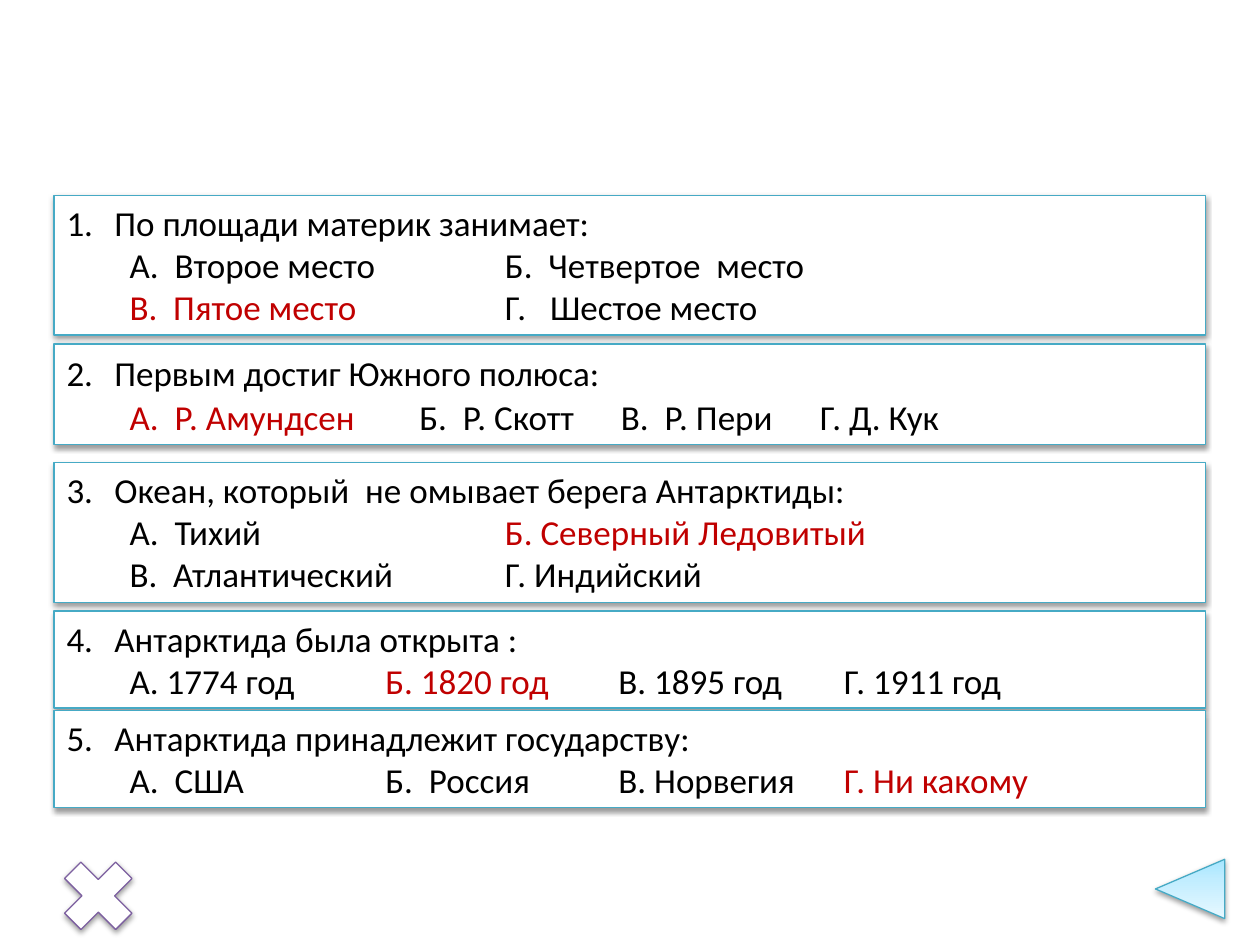
import copy

import pptx
import pptx.dml.color
import pptx.enum.shapes
import pptx.enum.text
import pptx.oxml
import pptx.oxml.ns
import pptx.util
from pptx.util import Inches

SHAPE = pptx.enum.shapes.MSO_SHAPE
BLACK, WHITE, RED = "000000", "FFFFFF", "C00000"
TEAL, PURPLE = "46AAC5", "7D60A0"
TWO_COLUMNS = (0.5, 3.48)
NAME_COLUMNS = (0.5, 2.8, 4.4, 5.98)
FOUR_COLUMNS = (0.5, 2.53, 4.38, 6.17)

QUESTIONS = [
    dict(top=0, height=1.11, question="По площади материк занимает:", columns=TWO_COLUMNS, correct="В.",
         rows=[["А.  Второе место", "Б.  Четвертое  место"],
               ["В.  Пятое место", "Г.   Шестое место"]]),
    dict(top=1.18, height=0.8, question="Первым достиг Южного полюса:", columns=NAME_COLUMNS, correct="А.",
         rows=[["А.  Р. Амундсен", "Б.  Р. Скотт", "В.  Р. Пери", "Г. Д. Кук"]], spacing=25),
    dict(top=2.12, height=1.11, question="Океан, который  не омывает берега Антарктиды:",
         columns=TWO_COLUMNS, correct="Б.",
         rows=[["А.  Тихий", "Б. Северный Ледовитый"],
               ["В.  Атлантический", "Г. Индийский"]]),
    dict(top=3.3, height=0.77, question="Антарктида была открыта :", columns=FOUR_COLUMNS, correct="Б.",
         rows=[["А. 1774 год", "Б. 1820 год", "В. 1895 год", "Г. 1911 год"]]),
    dict(top=4.09, height=0.77, question="Антарктида принадлежит государству:",
         columns=FOUR_COLUMNS, correct="Г.",
         rows=[["А.  США", "Б.  Россия", "В. Норвегия", "Г. Ни какому"]]),
]


def rgb(value):
    return pptx.dml.color.RGBColor.from_string(value)


def add_xml(parent, markup):
    namespace = pptx.oxml.ns.nsdecls("a")
    head, rest = markup.split(">", 1)
    closing = "/" if head.endswith("/") else ""
    parent.append(pptx.oxml.parse_xml(f"{head.rstrip('/')} {namespace}{closing}>{rest}"))


def add_text(paragraph, text, size=20, font="Calibri", color=BLACK):
    run = paragraph.add_run()
    run.text = text
    run.font.size = pptx.util.Pt(size)
    run.font.name = font
    run.font.color.rgb = rgb(color)


def add_shadowed_shape(shapes, kind, box, line, fill=WHITE):
    shape = shapes.add_shape(kind, *(Inches(length) for length in box))
    shape.fill.solid()
    shape.fill.fore_color.rgb = rgb(fill)
    shape.line.color.rgb = rgb(line)
    shape.line.width = pptx.util.Pt(0.75)
    shape.shadow.inherit = False
    effects = shape._element.spPr.find(pptx.oxml.ns.qn("a:effectLst"))
    add_xml(effects, '<a:outerShdw blurRad="40000" dist="20000" dir="5400000" rotWithShape="0">'
                     '<a:srgbClr val="000000"><a:alpha val="38000"/></a:srgbClr></a:outerShdw>')
    return shape


def format_paragraph(paragraph, margin, spacing):
    paragraph.alignment = pptx.enum.text.PP_ALIGN.LEFT
    if spacing:
        paragraph.line_spacing = pptx.util.Pt(spacing)
    properties = paragraph._p.get_or_add_pPr()
    properties.set("marL", str(Inches(margin)))
    return properties


def add_question(shapes, box, number, question, rows, columns, correct, spacing=None):
    frame = add_shadowed_shape(shapes, SHAPE.RECTANGLE, box, TEAL).text_frame
    frame.word_wrap = True
    frame.auto_size = pptx.enum.text.MSO_AUTO_SIZE.SHAPE_TO_FIT_TEXT
    frame.vertical_anchor = pptx.enum.text.MSO_ANCHOR.TOP

    heading = frame.paragraphs[0]
    properties = format_paragraph(heading, 0.38, spacing)
    properties.set("indent", str(Inches(-0.38)))
    add_xml(properties, '<a:buFont typeface="+mj-lt"/>')
    add_xml(properties, f'<a:buAutoNum type="arabicPeriod" startAt="{number}"/>')
    add_text(heading, question)

    tabs = "".join(f'<a:tab pos="{Inches(column)}" algn="l"/>' for column in columns)
    for row in rows:
        answers = frame.add_paragraph()
        answers.level = 1
        properties = format_paragraph(answers, 0, spacing)
        add_xml(properties, f"<a:tabLst>{tabs}</a:tabLst>")
        for answer in row:
            color = RED if answer.startswith(correct) else BLACK
            add_text(answers, "\t" + answer, color=color)


def add_quiz(slide, left, top, width):
    group = slide.shapes.add_group_shape()
    for number, entry in enumerate(QUESTIONS, 1):
        content = dict(entry)
        box = (left, top + content.pop("top"), width, content.pop("height"))
        add_question(group.shapes, box, number, **content)


def add_close_button(slide, box):
    add_shadowed_shape(slide.shapes, SHAPE.MATH_MULTIPLY, box, PURPLE)


def add_back_button(slide, box):
    arrow = add_shadowed_shape(slide.shapes, SHAPE.PENTAGON, box, TEAL)
    arrow.rotation = 180
    arrow.adjustments[0] = 1.167
    arrow.fill.gradient()
    arrow.fill.gradient_angle = 90
    stop_list = arrow._element.spPr.find(".//" + pptx.oxml.ns.qn("a:gsLst"))
    stop_list.insert(1, copy.deepcopy(stop_list[0]))
    stops = ((0, "A7E6FF"), (0.35, "C1EDFF"), (1, "E7F8FF"))
    for stop, (position, color) in zip(arrow.fill.gradient_stops, stops):
        stop.position = position
        stop.color.rgb = rgb(color)


def main():
    presentation = pptx.Presentation()
    presentation.slide_width = Inches(10)
    presentation.slide_height = Inches(7.5)
    slide = presentation.slides.add_slide(presentation.slide_layouts[6])
    add_close_button(slide, (0.39, 6.72, 0.78, 0.78))
    add_back_button(slide, (9.17, 6.82, 0.55, 0.47))
    add_quiz(slide, 0.43, 1.55, 9.14)
    presentation.save("out.pptx")


if __name__ == "__main__":
    main()
